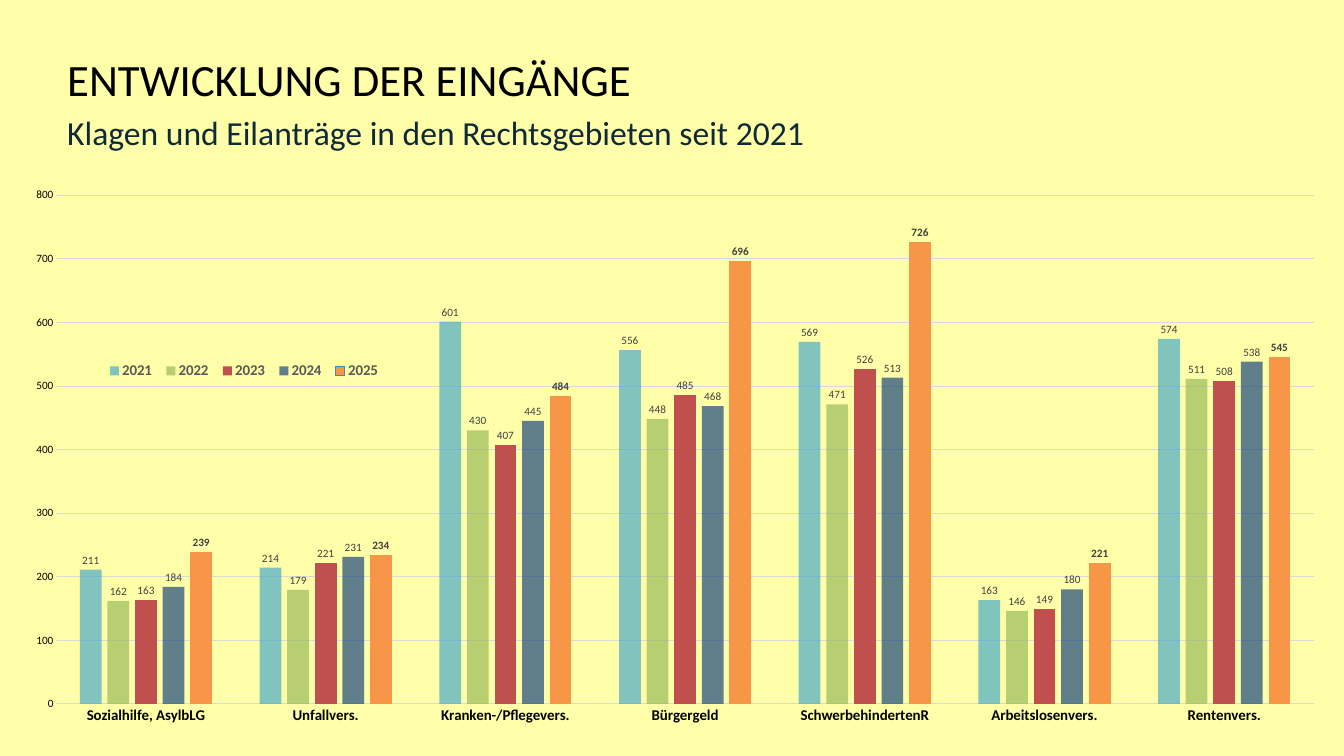
from dataclasses import dataclass
from typing import Optional

from lxml.etree import SubElement as Sub
from pptx import Presentation
from pptx.chart.data import CategoryChartData
from pptx.dml.color import RGBColor as RGB
from pptx.enum.chart import XL_CHART_TYPE as ChartType
from pptx.enum.chart import XL_LABEL_POSITION as LabelPos
from pptx.enum.chart import XL_LEGEND_POSITION as LegendPos
from pptx.enum.chart import XL_TICK_MARK as Tick
from pptx.enum.text import MSO_ANCHOR as Anchor
from pptx.enum.text import MSO_AUTO_SIZE as AutoSize
from pptx.enum.text import PP_ALIGN as Align
from pptx.oxml.ns import qn
from pptx.util import Inches, Pt


@dataclass(frozen=True)
class Theme:
    font: str = "Calibri"
    background: str = "FFFFAA"
    title: str = "000000"
    subtitle: str = "0F2A37"
    axis: str = "000000"
    grid: str = "D9D9D9"
    label: str = "404040"
    legend: str = "595959"
    outline: str = "4F81BD"
    title_pt: int = 48
    subtitle_pt: int = 36
    heading_pt: int = 16
    small_pt: int = 12
    base_pt: int = 10


@dataclass(frozen=True)
class Heading:
    text: str
    box: tuple
    size: int
    color: str
    leading: float


@dataclass(frozen=True)
class Year:
    name: str
    values: tuple
    color: str
    alpha: Optional[int] = None
    highlight: bool = False


THEME = Theme()
AREAS = ("Sozialhilfe, AsylbLG", "Unfallvers.", "Kranken-/Pflegevers.", "Bürgergeld",
         "SchwerbehindertenR", "Arbeitslosenvers.", "Rentenvers.")
YEARS = (
    Year("2021", (211, 214, 601, 556, 569, 163, 574), "4BACC6", 70),
    Year("2022", (162, 179, 430, 448, 471, 146, 511), "9BBB59", 70),
    Year("2023", (163, 221, 407, 485, 526, 149, 508), "C0504D"),
    Year("2024", (184, 231, 445, 468, 513, 180, 538), "1F497D", 70),
    Year("2025", (239, 234, 484, 696, 726, 221, 545), "F79646", highlight=True),
)
TITLE = Heading("ENTWICKLUNG DER EINGÄNGE", (1, 0.37, 11.47, 1.09),
                THEME.title_pt, THEME.title, 86.4)
SUBTITLE = Heading("Klagen und Eilanträge in den Rechtsgebieten seit 2021",
                   (1, 1.64, 11.83, 0.61), THEME.subtitle_pt, THEME.subtitle, 45.5)


def style_font(font, size: int, color: str, bold: bool = False) -> None:
    for name, value in dict(name=THEME.font, size=Pt(size), bold=bold).items():
        setattr(font, name, value)
    font.color.rgb = RGB.from_string(color)


def style_line(line, color: str) -> None:
    line.color.rgb = RGB.from_string(color)
    line.width = Pt(0.75)


def fill_solid(fill, color: str, alpha: Optional[int] = None) -> None:
    fill.solid()
    fill.fore_color.rgb = RGB.from_string(color)
    if alpha is not None:
        clr = fill._xPr.find(qn("a:solidFill"))[0]
        Sub(clr, qn("a:alpha"), val=str(alpha * 1000))


def draw_heading(sp, heading: Heading) -> None:
    sp.left, sp.top, sp.width, sp.height = map(Inches, heading.box)
    tf = sp.text_frame
    frame = dict(margin_left=0, margin_top=0, margin_right=0, margin_bottom=0,
                 word_wrap=True, vertical_anchor=Anchor.TOP,
                 auto_size=AutoSize.SHAPE_TO_FIT_TEXT)
    for name, value in frame.items():
        setattr(tf, name, value)
    p = tf.paragraphs[0]
    spacing = dict(alignment=Align.LEFT, line_spacing=Pt(heading.leading),
                   space_before=Pt(0), space_after=Pt(0))
    for name, value in spacing.items():
        setattr(p, name, value)
    r = p.add_run()
    r.text = heading.text
    style_font(r.font, heading.size, heading.color)


def place_part(part, box: tuple, inner: bool = False) -> None:
    for old in part.findall(qn("c:layout")):
        part.remove(old)
    layout = Sub(part, qn("c:layout"))
    part.insert(0 if inner else 1, layout)
    manual = Sub(layout, qn("c:manualLayout"))
    if inner:
        Sub(manual, qn("c:layoutTarget"), val="inner")
    for key in ("xMode", "yMode"):
        Sub(manual, qn(f"c:{key}"), val="edge")
    for key, value in zip("xywh", box):
        Sub(manual, qn(f"c:{key}"), val=str(value))


def style_axes(chart) -> None:
    cat, val = chart.category_axis, chart.value_axis
    for axis in (cat, val):
        axis.major_tick_mark = axis.minor_tick_mark = Tick.NONE
    style_font(cat.tick_labels.font, THEME.heading_pt, THEME.axis, True)
    style_font(val.tick_labels.font, THEME.small_pt, THEME.axis)
    style_line(cat.format.line, THEME.grid)
    val.format.line.fill.background()
    val.has_major_gridlines = True
    style_line(val.major_gridlines.format.line, THEME.grid)
    limits = dict(minimum_scale=0, maximum_scale=800, major_unit=100)
    for name, value in limits.items():
        setattr(val, name, value)


def style_series(series, year: Year) -> None:
    series.invert_if_negative = False
    fill_solid(series.format.fill, year.color, year.alpha)
    if year.highlight:
        style_line(series.format.line, THEME.outline)
        for i in range(len(year.values)):
            fmt = series.points[i].format
            fill_solid(fmt.fill, year.color)
            fmt.line.fill.background()
    labels = series.data_labels
    labels.show_value = True
    labels.position = LabelPos.OUTSIDE_END
    style_font(labels.font, THEME.small_pt, THEME.label, year.highlight)


def draw_chart(s) -> None:
    data = CategoryChartData()
    data.categories = AREAS
    for year in YEARS:
        data.add_series(year.name, year.values)
    box = map(Inches, (0.33, 2.07, 19.42, 8.96))
    chart = s.shapes.add_chart(ChartType.COLUMN_CLUSTERED, *box, data).chart
    chart.has_title = False
    style_font(chart.font, THEME.base_pt, THEME.axis)
    style_axes(chart)
    plot = chart.plots[0]
    for name, value in dict(gap_width=219, overlap=-27, vary_by_categories=False).items():
        setattr(plot, name, value)
    for series, year in zip(plot.series, YEARS):
        style_series(series, year)
    chart.has_legend = True
    legend = chart.legend
    legend.position = LegendPos.BOTTOM
    legend.include_in_layout = False
    style_font(legend.font, THEME.heading_pt, THEME.legend, True)
    place_part(legend._element, (0.06, 0.36, 0.22, 0.05))
    place_part(chart._chartSpace.chart.plotArea, (0.026, 0.093, 0.964, 0.845), inner=True)


def main() -> None:
    prs = Presentation()
    prs.slide_width, prs.slide_height = Inches(20), Inches(11.25)
    s = prs.slides.add_slide(prs.slide_layouts[2])
    fill_solid(s.background.fill, THEME.background)
    draw_heading(s.placeholders[1], SUBTITLE)
    draw_heading(s.shapes.title, TITLE)
    draw_chart(s)
    prs.save("out.pptx")


if __name__ == "__main__":
    main()
